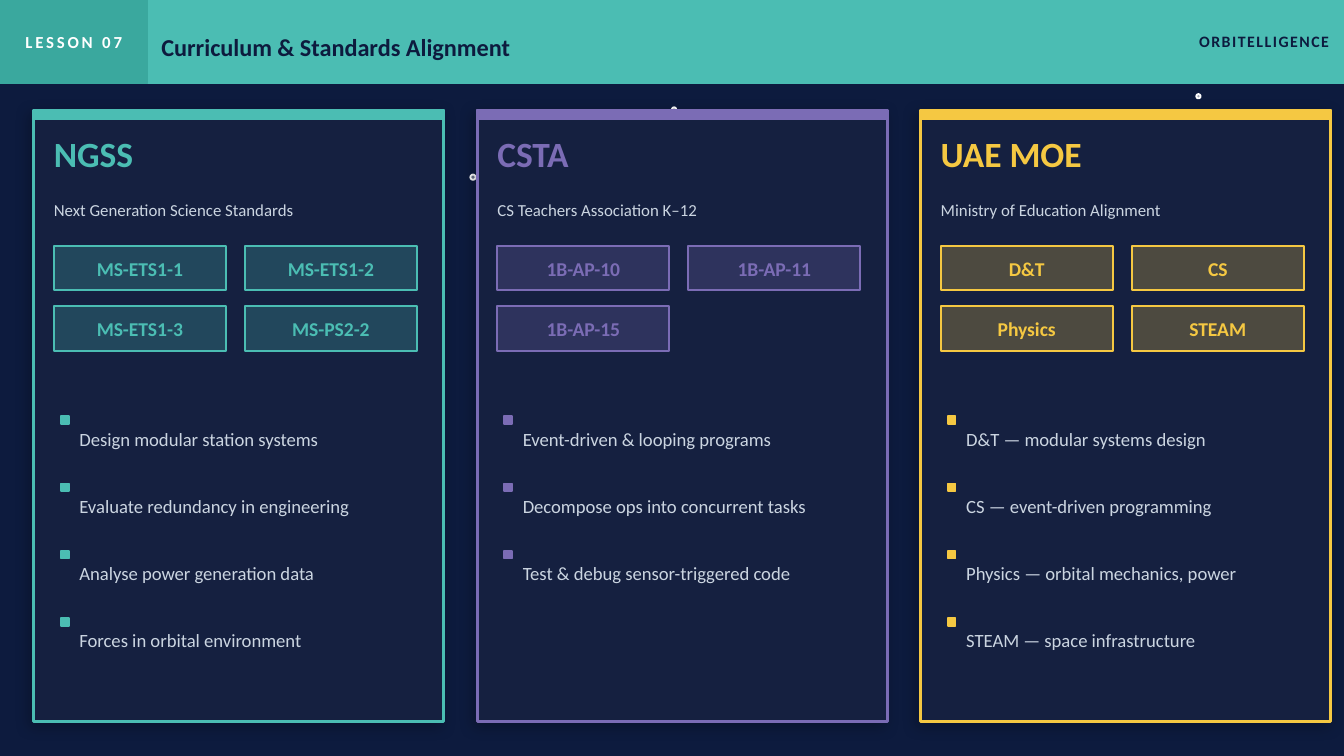
from lxml import etree
from pptx import Presentation
from pptx.dml.color import RGBColor
from pptx.enum.shapes import MSO_SHAPE
from pptx.enum.text import MSO_ANCHOR, MSO_AUTO_SIZE, PP_ALIGN
from pptx.oxml.ns import qn
from pptx.util import Cm, Pt

RECTANGLE, OVAL = MSO_SHAPE.RECTANGLE, MSO_SHAPE.OVAL
TOP, MIDDLE = MSO_ANCHOR.TOP, MSO_ANCHOR.MIDDLE
LEFT, CENTER, RIGHT = PP_ALIGN.LEFT, PP_ALIGN.CENTER, PP_ALIGN.RIGHT
NO_AUTOFIT = MSO_AUTO_SIZE.NONE

NAVY = RGBColor(0x0D, 0x1B, 0x3E)
CARD_NAVY = RGBColor(0x15, 0x20, 0x40)
TEAL = RGBColor(0x4B, 0xBD, 0xB3)
DARK_TEAL = RGBColor(0x3A, 0xA8, 0x9E)
PURPLE = RGBColor(0x7B, 0x6C, 0xB5)
YELLOW = RGBColor(0xF5, 0xC8, 0x42)
PALE = RGBColor(0xCB, 0xD5, 0xE1)
WHITE = RGBColor(0xFF, 0xFF, 0xFF)

COMPARISON_LAYOUT = 4
HEADER_HEIGHT = 1.57
CARD_LEFT, CARD_TOP, CARD_WIDTH, CARD_HEIGHT, CARD_PITCH = 0.64, 2.08, 7.75, 11.56, 8.38
CODE_TOP, CODE_WIDTH, CODE_HEIGHT = 4.65, 3.25, 0.84
CODE_PITCH_X, CODE_PITCH_Y = 3.61, 1.14
MARKER_TOP, MARKER_SIZE, GOAL_PITCH = 7.87, 0.15, 1.27
GOAL_GAP = Pt(21.36)

STARS = [(8.89, 3.3, 0.1, 40), (12.7, 2.03, 0.08, 65), (22.61, 1.78, 0.08, 60)]

STANDARDS = [
    ("NGSS", "Next Generation Science Standards", TEAL,
     ["MS-ETS1-1", "MS-ETS1-2", "MS-ETS1-3", "MS-PS2-2"],
     ["Design modular station systems", "Evaluate redundancy in engineering",
      "Analyse power generation data", "Forces in orbital environment"]),
    ("CSTA", "CS Teachers Association K–12", PURPLE,
     ["1B-AP-10", "1B-AP-11", "1B-AP-15"],
     ["Event-driven & looping programs", "Decompose ops into concurrent tasks",
      "Test & debug sensor-triggered code"]),
    ("UAE MOE", "Ministry of Education Alignment", YELLOW,
     ["D&T", "CS", "Physics", "STEAM"],
     ["D&T — modular systems design", "CS — event-driven programming",
      "Physics — orbital mechanics, power", "STEAM — space infrastructure"]),
]


def set_all(target, values):
    """Set each named attribute of the target."""
    for name, value in values.items():
        setattr(target, name, value)


def write(holder, lines, size, color, bold=False, align=LEFT, anchor=MIDDLE,
          spacing=1.0, gap=0, tracking=0, top_inset=0, right_inset=0):
    """Write formatted paragraphs into a text holder."""
    frame = holder.text_frame
    frame.text = "\n".join(lines)
    set_all(frame, {"word_wrap": True, "auto_size": NO_AUTOFIT, "vertical_anchor": anchor,
                    "margin_left": 0, "margin_top": Cm(top_inset),
                    "margin_right": Cm(right_inset), "margin_bottom": 0})
    for number, paragraph in enumerate(frame.paragraphs):
        set_all(paragraph, {"alignment": align, "line_spacing": spacing,
                            "space_before": gap if number else 0, "space_after": 0})
        run = paragraph.runs[0]
        set_all(run.font, {"name": "Calibri", "size": Pt(size), "bold": bold})
        run.font.color.rgb = color
        if tracking:
            run.font._element.set("spc", str(tracking))


def add_block(slide, box, fill, line, kind=RECTANGLE, line_width=1, opacity=100):
    """Add a filled, outlined shape without a shadow."""
    block = slide.shapes.add_shape(kind, *map(Cm, box))
    block.shadow.inherit = False
    block.fill.solid()
    block.fill.fore_color.rgb = fill
    block.line.color.rgb = line
    block.line.width = Pt(line_width)
    if opacity < 100:
        tint = block._element.spPr.find(qn("a:solidFill"))[0]
        etree.SubElement(tint, qn("a:alpha"), val=str(opacity * 1000))
    return block


def add_label(slide, box, text, size, color, **layout):
    """Add a one-line text box."""
    write(slide.shapes.add_textbox(*map(Cm, box)), [text], size, color, **layout)


def place(placeholder, box):
    """Move a placeholder to its box, in front of the shapes drawn so far."""
    set_all(placeholder, dict(zip(("left", "top", "width", "height"), map(Cm, box))))
    placeholder._element.getparent().append(placeholder._element)


def add_drop_shadow(block):
    """Give a block a soft black shadow."""
    effects = block._element.spPr.find(qn("a:effectLst"))
    shadow = etree.SubElement(effects, qn("a:outerShdw"), blurRad=str(Pt(8)),
                              dist=str(Pt(3)), dir=str(135 * 60000),
                              algn="bl", rotWithShape="0")
    black = etree.SubElement(shadow, qn("a:srgbClr"), val="000000")
    etree.SubElement(black, qn("a:alpha"), val="25000")


def add_header(slide):
    """Draw the header band with lesson number, title and programme name."""
    add_block(slide, (0, 0, 25.4, HEADER_HEIGHT), TEAL, TEAL)
    lesson = add_block(slide, (0, 0, 2.79, HEADER_HEIGHT), DARK_TEAL, DARK_TEAL)
    write(lesson, ["LESSON 07"], 9, WHITE, bold=True, align=CENTER, tracking=150)
    title = slide.shapes.title
    place(title, (3.05, 0, 19.05, HEADER_HEIGHT))
    write(title, ["Curriculum & Standards Alignment"], 13, NAVY, bold=True, top_inset=0.2)
    add_label(slide, (19.56, 0, 5.84, HEADER_HEIGHT), "ORBITELLIGENCE", 8.5, NAVY,
              bold=True, align=RIGHT, tracking=80, right_inset=0.28)


def add_goals(slide, placeholder, left, goals, accent):
    """Fill a list placeholder and set a square marker above each goal."""
    for row in range(len(goals)):
        add_block(slide, (left + 0.51, MARKER_TOP + row * GOAL_PITCH, MARKER_SIZE, MARKER_SIZE),
                  accent, accent)
    place(placeholder, (left + 0.86, 8.01, 6.6, len(goals) * GOAL_PITCH))
    write(placeholder, goals, 10, PALE, anchor=TOP, spacing=1.2, gap=GOAL_GAP)
    for paragraph in placeholder.text_frame.paragraphs:
        properties = paragraph._p.get_or_add_pPr()
        properties.set("marL", "0")
        properties.set("indent", "0")
        etree.SubElement(properties, qn("a:buNone"))


def add_standard(slide, placeholder, left, name, subtitle, accent, codes, goals):
    """Draw one standards card."""
    card = add_block(slide, (left, CARD_TOP, CARD_WIDTH, CARD_HEIGHT), CARD_NAVY, accent,
                     line_width=1.5)
    add_drop_shadow(card)
    add_block(slide, (left, CARD_TOP, CARD_WIDTH, 0.18), accent, accent)
    inner = left + 0.38
    add_label(slide, (inner, 2.36, 6.86, 1.07), name, 19, accent, bold=True)
    add_label(slide, (inner, 3.48, 6.99, 0.97), subtitle, 9, PALE)
    for number, code in enumerate(codes):
        row, column = divmod(number, 2)
        chip = add_block(slide, (inner + column * CODE_PITCH_X, CODE_TOP + row * CODE_PITCH_Y,
                                 CODE_WIDTH, CODE_HEIGHT), accent, accent, opacity=25)
        write(chip, [code], 10.5, accent, bold=True, align=CENTER)
    add_goals(slide, placeholder, left, goals, accent)


def main():
    """Build the standards alignment slide."""
    deck = Presentation()
    deck.slide_width, deck.slide_height = Cm(25.4), Cm(14.29)
    slide = deck.slides.add_slide(deck.slide_layouts[COMPARISON_LAYOUT])
    slide.background.fill.solid()
    slide.background.fill.fore_color.rgb = NAVY
    *lists, spare = list(slide.placeholders)[1:]
    spare._element.getparent().remove(spare._element)

    for left, top, size, opacity in STARS:
        add_block(slide, (left, top, size, size), WHITE, WHITE, kind=OVAL, opacity=opacity)
    add_header(slide)
    for number, (placeholder, standard) in enumerate(zip(lists, STANDARDS)):
        add_standard(slide, placeholder, CARD_LEFT + number * CARD_PITCH, *standard)
    deck.save("out.pptx")


if __name__ == "__main__":
    main()
